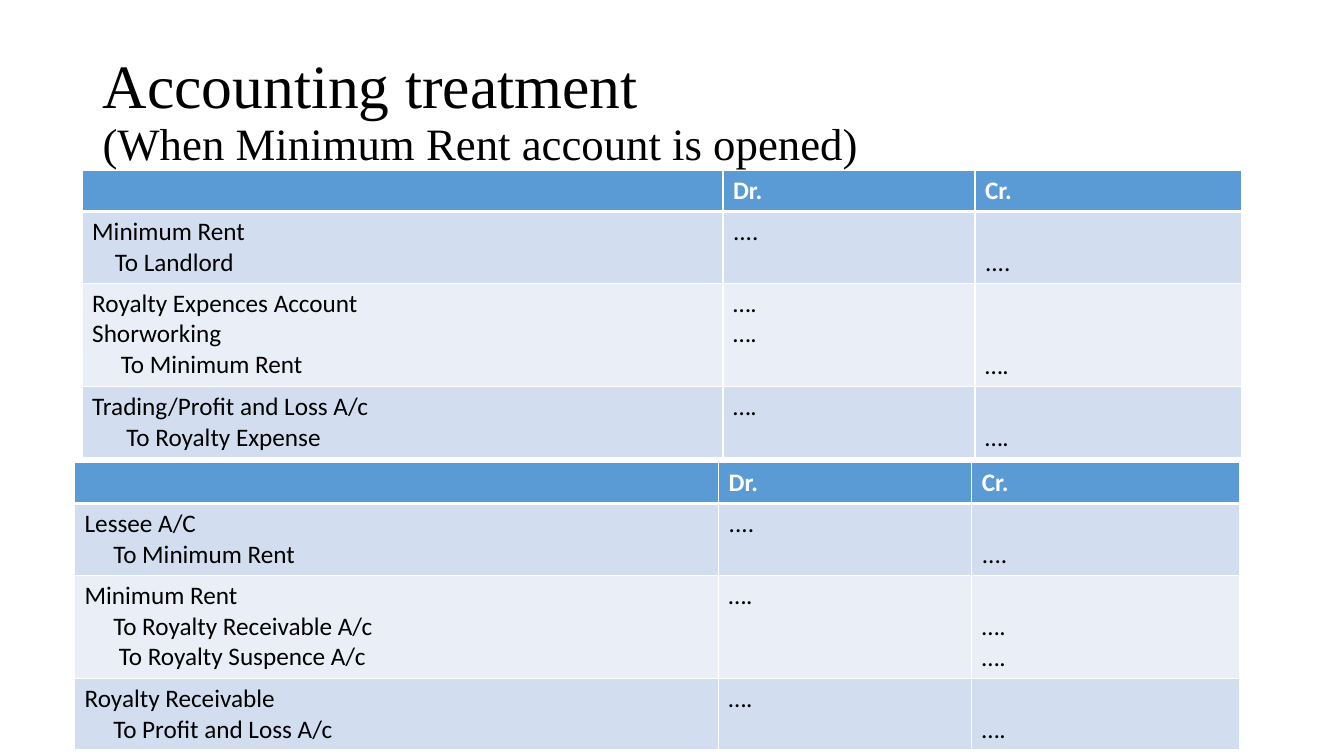
from pptx import Presentation
from pptx.dml.color import RGBColor as RGB
from pptx.enum.text import MSO_ANCHOR as ANCHOR, MSO_AUTO_SIZE as AUTO, PP_ALIGN as ALIGN
from pptx.oxml.ns import qn
from pptx.util import Cm, Pt
from lxml.etree import SubElement as Sub

COLOR = {"head": "5B9BD5", "odd": "D2DEEF", "even": "EAEFF7",
         "white": "FFFFFF", "black": "000000"}


def write(para, text, font, size, color, bold=False):
    run = para.add_run()
    run.text = text
    run.font.name = font
    run.font.size = Pt(size)
    run.font.bold = bold
    run.font.color.rgb = RGB.from_string(COLOR[color])


def paint(cell, color, base):
    # Borders come before the fill in the cell properties
    props = cell._tc.get_or_add_tcPr()
    for side in ("lnL", "lnR", "lnT", "lnB"):
        width = base if side == "lnB" else 1
        line = Sub(props, qn("a:" + side), w=str(Pt(width)))
        solid = Sub(line, qn("a:solidFill"))
        Sub(solid, qn("a:srgbClr"), val=COLOR["white"])
    cell.fill.solid()
    cell.fill.fore_color.rgb = RGB.from_string(COLOR[color])


deck = Presentation()
deck.slide_width, deck.slide_height = Cm(33.87), Cm(19.05)
slide = deck.slides.add_slide(deck.slide_layouts[5])

# Title
title = slide.shapes.title
title.left, title.top = Cm(2.33), Cm(1.01)
title.width, title.height = Cm(29.21), Cm(3.68)
frame = title.text_frame
frame.auto_size = AUTO.NONE
frame.vertical_anchor = ANCHOR.MIDDLE
para = frame.paragraphs[0]
para.alignment = ALIGN.LEFT
para.line_spacing = 0.9
write(para, "Accounting treatment", "Times New Roman", 44, "black")
para.add_line_break()
write(para, "(When Minimum Rent account is opened)", "Times New Roman", 32, "black")

# Journal entries: (account lines, debit marks, credit marks, indent of "To" in cm)
lessee = [
    (["Minimum Rent", "To Landlord"], ["...."], ["...."], [0.57]),
    (["Royalty Expences Account", "Shorworking", "To Minimum Rent"],
     ["….", "…."], ["…."], [0.72]),
    (["Trading/Profit and Loss A/c", "To Royalty Expense"], ["…."], ["…."], [0.86]),
]
lessor = [
    (["Lessee A/C", "To Minimum Rent"], ["...."], ["...."], [0.72]),
    (["Minimum Rent", "To Royalty Receivable A/c", "To Royalty Suspence A/c"],
     ["…."], ["….", "…."], [0.72, 0.86]),
    (["Royalty Receivable", "To Profit and Loss A/c"], ["…."], ["…."], [0.72]),
]
tables = [
    (2.07, 4.3, [16.15, 6.35, 6.71], lessee),
    (1.88, 11.66, [16.23, 6.38, 6.76], lessor),
]

# Tables
for left, top, widths, entries in tables:
    heights = [1.03] + [0.14 + 0.82 * len(entry[0]) for entry in entries]
    table = slide.shapes.add_table(len(heights), 3, Cm(left), Cm(top),
                                   Cm(sum(widths)), Cm(sum(heights))).table
    for col, width in zip(table.columns, widths):
        col.width = Cm(width)
    for row, height in zip(table.rows, heights):
        row.height = Cm(height)

    # Header row
    for cell, text in zip(table.rows[0].cells, ["", "Dr.", "Cr."]):
        paint(cell, "head", 3)
        if text:
            write(cell.text_frame.paragraphs[0], text, "Calibri", 18, "white", True)

    # Entry rows: debits start at the top, credits end at the bottom
    for num, (names, debits, credits, indents) in enumerate(entries, 1):
        cells = table.rows[num].cells
        steps = iter(indents)
        for cell, lines in zip(cells, [names, debits, credits]):
            paint(cell, "odd" if num % 2 else "even", 1)
            for pos, text in enumerate(lines):
                body = cell.text_frame
                para = body.add_paragraph() if pos else body.paragraphs[0]
                if text.startswith("To "):
                    para._p.get_or_add_pPr().set("marL", str(Cm(next(steps))))
                write(para, text, "Calibri", 18, "black")
        cells[2].vertical_anchor = ANCHOR.BOTTOM

deck.save("out.pptx")
